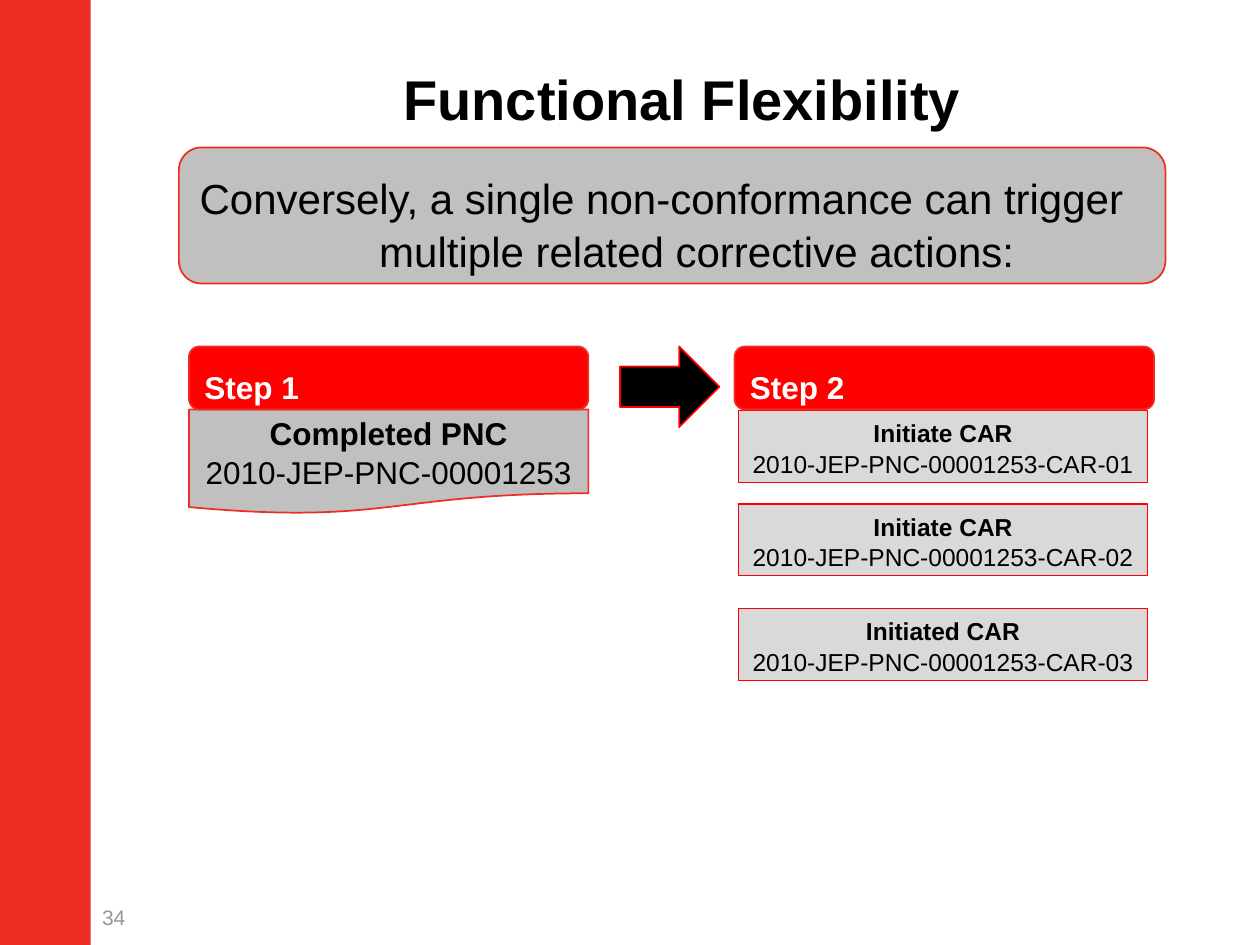
import dataclasses
import typing

import pptx
import pptx.dml.color
import pptx.enum.shapes
import pptx.enum.text
import pptx.util

Inches = pptx.util.Inches
Pt = pptx.util.Pt
Shape = pptx.enum.shapes.MSO_SHAPE
Align = pptx.enum.text.PP_ALIGN
Anchor = pptx.enum.text.MSO_ANCHOR


@dataclasses.dataclass(frozen=True)
class Theme:
    font: str = "Arial"
    brand: str = "EE2E24"
    red: str = "FF0000"
    black: str = "000000"
    white: str = "FFFFFF"
    grey: str = "C0C0C0"
    pale: str = "D9D9D9"
    muted: str = "969696"
    title_size: float = 32
    intro_size: float = 24
    step_size: float = 18
    action_size: float = 14
    number_size: float = 12
    leading: float = 1.05
    title_leading: float = 0.95
    corner: float = 0.167


THEME = Theme()


class Area(typing.NamedTuple):
    left: float
    top: float
    width: float
    height: float


class Line(typing.NamedTuple):
    text: str
    bold: bool = False


class Action(typing.NamedTuple):
    top: float
    heading: str
    number: int


PNC = "2010-JEP-PNC-00001253"
STEPS = {
    "Step 1": Area(1.5, 2.75, 3.17, 0.5),
    "Step 2": Area(5.83, 2.75, 3.33, 0.5),
}
ACTIONS = [
    Action(3.26, "Initiate CAR", 1),
    Action(4, "Initiate CAR", 2),
    Action(4.83, "Initiated CAR", 3),
]


def rgb(value: str) -> pptx.dml.color.RGBColor:
    return pptx.dml.color.RGBColor.from_string(value)


def draw_shape(page, kind, area: Area, fill: str, outline: str = "", weight: float = 1):
    shape = page.shapes.add_shape(kind, *map(Inches, area))
    shape.shadow.inherit = False
    shape.fill.solid()
    shape.fill.fore_color.rgb = rgb(fill)
    if outline:
        shape.line.color.rgb = rgb(outline)
        shape.line.width = Pt(weight)
    else:
        shape.line.fill.background()
    if kind == Shape.ROUNDED_RECTANGLE:
        shape.adjustments[0] = THEME.corner
    return shape


def write(box, lines: list[Line], size: float, color: str = THEME.black,
          align=Align.CENTER, anchor=Anchor.TOP, insets=(0, 0, 0, 0),
          wrap: bool = True, hanging: float = 0, leading: float = THEME.leading) -> None:
    """Fill a box with one paragraph per line; insets run left, top, right, bottom."""
    frame = box.text_frame
    left, top, right, bottom = map(Inches, insets)
    frame_format = {
        "auto_size": pptx.enum.text.MSO_AUTO_SIZE.NONE,
        "word_wrap": wrap,
        "vertical_anchor": anchor,
        "margin_left": left,
        "margin_top": top,
        "margin_right": right,
        "margin_bottom": bottom,
    }
    for name, value in frame_format.items():
        setattr(frame, name, value)
    for index, line in enumerate(lines):
        para = frame.add_paragraph() if index else frame.paragraphs[0]
        para.alignment = align
        para.line_spacing = leading
        if hanging:
            properties = para._p.get_or_add_pPr()
            properties.set("marL", str(Inches(hanging)))
            properties.set("indent", str(-Inches(hanging)))
        span = para.add_run()
        span.text = line.text
        font_format = {"name": THEME.font, "size": Pt(size), "bold": line.bold}
        for name, value in font_format.items():
            setattr(span.font, name, value)
        span.font.color.rgb = rgb(color)


def draw_title(page, text: str) -> None:
    title = page.shapes.title
    area = Area(1, 0.32, 8.83, 0.97)
    for name, value in zip(area._fields, area):
        setattr(title, name, Inches(value))
    write(title, [Line(text, True)], THEME.title_size, anchor=Anchor.MIDDLE,
          leading=THEME.title_leading)


def draw_step(page, label: str, area: Area) -> None:
    header = draw_shape(page, Shape.ROUNDED_RECTANGLE, area, THEME.red, THEME.brand)
    write(header, [Line(label, True)], THEME.step_size, THEME.white, Align.LEFT,
          insets=(0.1, 0.13, 0.1, 0.1), wrap=False, hanging=0.25)


def draw_action(page, action: Action) -> None:
    box = draw_shape(page, Shape.RECTANGLE, Area(5.86, action.top, 3.25, 0.57),
                     THEME.pale, THEME.red, 0.75)
    write(box, [Line(action.heading, True), Line(f"{PNC}-CAR-{action.number:02}")],
          THEME.action_size, insets=(0.1, 0.05, 0.1, 0.05))


def draw_completed(page) -> None:
    document = draw_shape(page, Shape.FLOWCHART_DOCUMENT, Area(1.5, 3.25, 3.17, 0.83),
                          THEME.grey, THEME.brand)
    write(document, [Line("Completed PNC", True), Line(PNC)], THEME.step_size,
          anchor=Anchor.MIDDLE, insets=(0.1,) * 4, wrap=False)


def draw_intro(page, text: str) -> None:
    draw_shape(page, Shape.ROUNDED_RECTANGLE, Area(1.42, 1.17, 7.83, 1.08),
               THEME.grey, THEME.brand)
    box = page.shapes.add_textbox(*map(Inches, Area(1.5, 1.35, 7.5, 1.08)))
    write(box, [Line(text)], THEME.intro_size, hanging=0.56)


def main() -> None:
    deck = pptx.Presentation()
    deck.slide_width, deck.slide_height = Inches(10), Inches(7.5)
    page = deck.slides.add_slide(deck.slide_layouts.get_by_name("Title Only"))

    draw_shape(page, Shape.RECTANGLE, Area(0, 0, 0.72, 7.5), THEME.brand)
    draw_title(page, "Functional Flexibility")
    page_number = page.shapes.add_textbox(*map(Inches, Area(0.81, 6.86, 0.49, 0.52)))
    write(page_number, [Line("34")], THEME.number_size, THEME.muted, Align.LEFT,
          Anchor.BOTTOM)

    draw_completed(page)
    for action in ACTIONS:
        draw_action(page, action)
    for label, area in STEPS.items():
        draw_step(page, label, area)
    draw_shape(page, Shape.RIGHT_ARROW, Area(4.92, 2.75, 0.79, 0.64),
               THEME.black, THEME.red)
    draw_intro(page, "Conversely, a single non-conformance can trigger "
                     "multiple related corrective actions:")
    deck.save("out.pptx")


if __name__ == "__main__":
    main()
